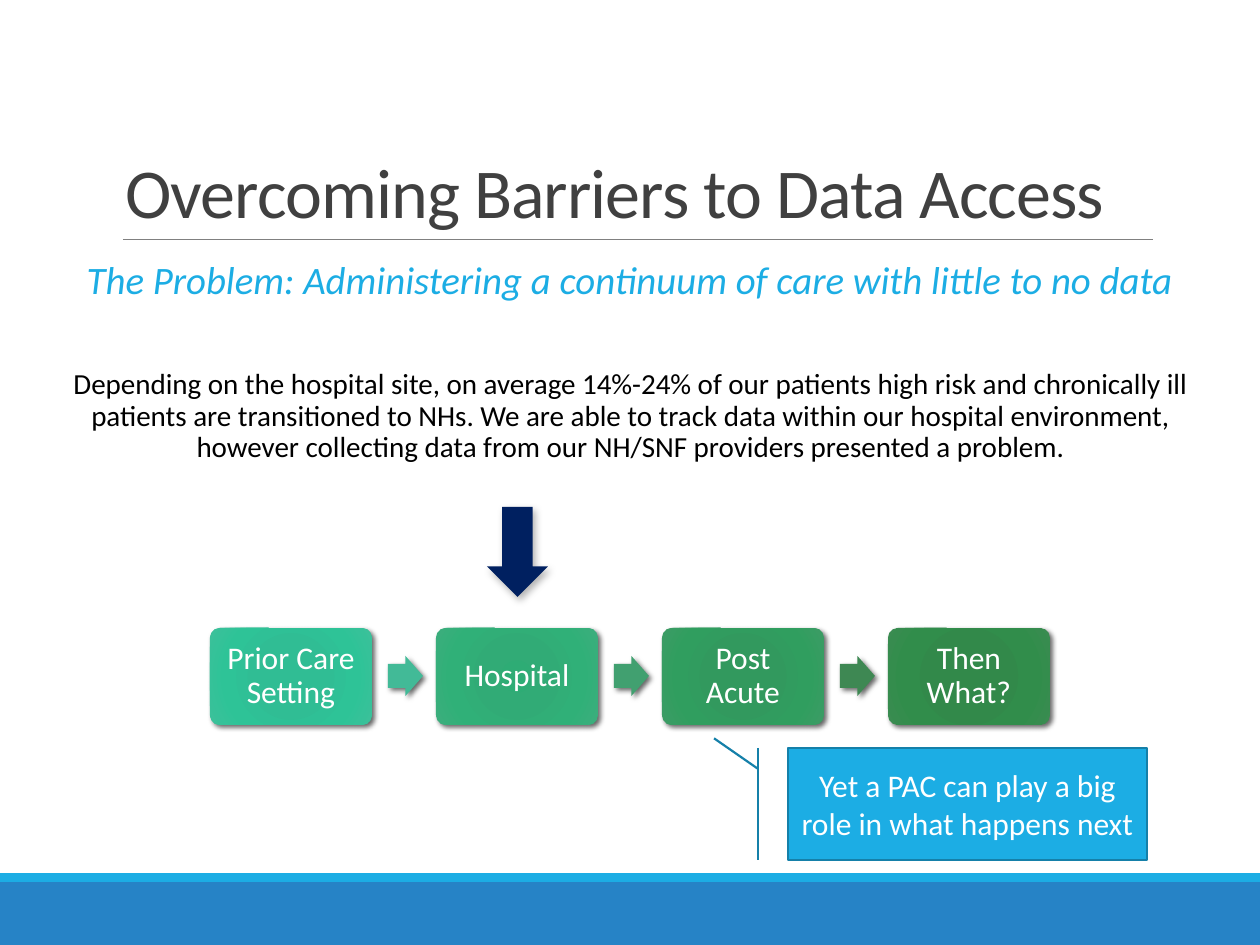
"""Build the slide on barriers to data access along the continuum of care."""
from dataclasses import dataclass
from typing import Any, NamedTuple, Optional

from lxml import etree
from pptx import Presentation
from pptx import util as u
from pptx.dml.color import RGBColor
from pptx.enum import shapes, text
from pptx.oxml import ns

SCALE = 914400 / 126
SHAPE = shapes.MSO_SHAPE
CENTER = text.PP_ALIGN.CENTER
MIDDLE = text.MSO_ANCHOR.MIDDLE


@dataclass(frozen=True)
class Theme:
    font: str = "Calibri"
    title: str = "404040"
    accent: str = "1CADE4"
    accent_dark: str = "1580A9"
    footer: str = "2683C6"
    rule: str = "808080"
    body: str = "000000"
    light: str = "FFFFFF"
    navy: str = "002060"
    title_size: float = 40
    lead_size: float = 22.2
    body_size: float = 16.6
    label_size: float = 18


class Box(NamedTuple):
    left: int
    top: int
    width: int
    height: int


class Shadow(NamedTuple):
    alpha: int
    blur: float
    distance: float
    angle: int


@dataclass(frozen=True)
class Step:
    label: str
    gradient: tuple[str, str, str, str]
    arrow: Optional[str] = None


@dataclass(frozen=True)
class Line:
    wording: str
    size: float
    color: str
    font: dict[str, Any]
    paragraph: dict[str, Any]


THEME = Theme()
STEP_SHADOW = Shadow(60, 3, 2, 45)
DOWN_SHADOW = Shadow(30, 4.5, 2.6, 53)
STOPS = (0, 34, 70, 100)
FIRST_STEP = Box(210, 628, 162, 97)
FIRST_ARROW = Box(388, 656, 35, 40)
PITCH = 226
STEPS = (
    Step("Prior Care Setting", ("2DBE94", "30BD94", "2EC397", "3CC09A"), "42BA97"),
    Step("Hospital", ("2EAC75", "31AB76", "30B078", "3CAE7D"), "41A070"),
    Step("Post Acute", ("2F9A5D", "32995E", "309E5F", "3C9C65"), "3E8853"),
    Step("Then What?", ("2F8949", "32894A", "318D4B", "3A8C51")),
)
BODY_FORMAT = {"alignment": CENTER, "line_spacing": 0.9, "space_after": u.Pt(2)}
TITLE_LINE = Line("Overcoming Barriers to Data Access", THEME.title_size, THEME.title,
                  {}, {"line_spacing": 0.85})
BODY_LINES = (
    Line("The Problem: Administering a continuum of care with little to no data",
         THEME.lead_size, THEME.accent, {"italic": True},
         {**BODY_FORMAT, "space_before": u.Pt(12)}),
    Line("Depending on the hospital site, on average 14%-24% of our patients high risk and "
         "chronically ill patients are transitioned to NHs. We are able to track data within "
         "our hospital environment, however collecting data from our NH/SNF providers "
         "presented a problem.",
         THEME.body_size, THEME.body, {}, {**BODY_FORMAT, "space_before": u.Pt(36)}),
)


def px(length: int) -> u.Emu:
    return u.Emu(round(length * SCALE))


def place(box: Box) -> list[u.Emu]:
    return [px(length) for length in box]


def apply(target: Any, values: dict[str, Any]) -> None:
    for name, value in values.items():
        setattr(target, name, value)


def add_xml(parent: Any, tag: str, **attributes: Any) -> Any:
    values = {name: str(value) for name, value in attributes.items()}
    return etree.SubElement(parent, ns.qn(tag), values)


def write(frame: Any, lines: tuple[Line, ...], frame_format: dict[str, Any]) -> None:
    apply(frame, {"word_wrap": True, **frame_format})
    for index, line in enumerate(lines):
        paragraph = frame.add_paragraph() if index else frame.paragraphs[0]
        apply(paragraph, line.paragraph)
        run = paragraph.add_run()
        run.text = line.wording
        apply(run.font, {"name": THEME.font, "size": u.Pt(line.size), **line.font})
        run.font.color.rgb = RGBColor.from_string(line.color)


def label(wording: str, line_spacing: float) -> Line:
    return Line(wording, THEME.label_size, THEME.light, {},
                {"alignment": CENTER, "line_spacing": line_spacing})


def add_shape(slide: Any, kind: Any, box: Box, fill: Optional[str] = None,
              adjustments: tuple[float, ...] = ()) -> Any:
    shape = slide.shapes.add_shape(kind, *place(box))
    shape.shadow.inherit = False
    shape.line.fill.background()
    if fill:
        shape.fill.solid()
        shape.fill.fore_color.rgb = RGBColor.from_string(fill)
    for index, value in enumerate(adjustments):
        shape.adjustments[index] = value
    return shape


def add_shadow(shape: Any, shadow: Shadow) -> None:
    effects = shape.element.spPr.find(ns.qn("a:effectLst"))
    outer = add_xml(effects, "a:outerShdw", blurRad=u.Pt(shadow.blur),
                    dist=u.Pt(shadow.distance), dir=shadow.angle * 60000,
                    algn="ctr", rotWithShape=0)
    color = add_xml(outer, "a:srgbClr", val="000000")
    add_xml(color, "a:alpha", val=shadow.alpha * 1000)


def add_radial_fill(shape: Any, colors: tuple[str, ...]) -> None:
    gradient = etree.Element(ns.qn("a:gradFill"), {"rotWithShape": "1"})
    stops = add_xml(gradient, "a:gsLst")
    for position, color in zip(STOPS, colors):
        stop = add_xml(stops, "a:gs", pos=position * 1000)
        add_xml(stop, "a:srgbClr", val=color)
    circle = add_xml(gradient, "a:path", path="circle")
    add_xml(circle, "a:fillToRect", **dict.fromkeys("ltrb", 100000))
    shape.element.spPr.find(ns.qn("a:prstGeom")).addnext(gradient)


def add_step(slide: Any, step: Step, offset: int) -> None:
    box = FIRST_STEP._replace(left=FIRST_STEP.left + offset)
    card = add_shape(slide, SHAPE.ROUNDED_RECTANGLE, box, adjustments=(0.1,))
    add_radial_fill(card, step.gradient)
    add_shadow(card, STEP_SHADOW)
    margins = dict.fromkeys(("margin_left", "margin_right", "margin_top", "margin_bottom"), px(12))
    write(card.text_frame, (label(step.label, 0.9),), {**margins, "vertical_anchor": MIDDLE})
    if step.arrow:
        box = FIRST_ARROW._replace(left=FIRST_ARROW.left + offset)
        arrow = add_shape(slide, SHAPE.RIGHT_ARROW, box, step.arrow, (0.6, 0.5))
        add_shadow(arrow, STEP_SHADOW)


def add_rule(slide: Any, left: int, right: int, top: int) -> None:
    rule = slide.shapes.add_connector(shapes.MSO_CONNECTOR.STRAIGHT,
                                      px(left), px(top), px(right), px(top))
    rule.line.color.rgb = RGBColor.from_string(THEME.rule)
    rule.line.width = u.Pt(0.5)
    add_xml(rule.element.spPr, "a:effectLst")


def add_callout(slide: Any) -> None:
    callout = add_shape(slide, SHAPE.LINE_CALLOUT_1_BORDER_AND_ACCENT_BAR,
                        Box(788, 748, 359, 112), THEME.accent,
                        (0.188, -0.083, -0.086, -0.206))
    callout.line.color.rgb = RGBColor.from_string(THEME.accent_dark)
    callout.line.width = u.Pt(1.25)
    line = label("Yet a PAC can play a big role in what happens next", 1.0)
    write(callout.text_frame, (line,), {"vertical_anchor": MIDDLE})


def main() -> None:
    presentation = Presentation()
    apply(presentation, {"slide_width": px(1260), "slide_height": px(945)})
    slide = presentation.slides.add_slide(presentation.slide_layouts[6])
    add_shape(slide, SHAPE.RECTANGLE, Box(0, 882, 1260, 63), THEME.footer)
    add_shape(slide, SHAPE.RECTANGLE, Box(0, 873, 1260, 9), THEME.accent)
    add_rule(slide, 123, 1153, 239)
    body = slide.shapes.add_textbox(*place(Box(68, 255, 1124, 234)))
    write(body.text_frame, BODY_LINES, {"margin_left": 0, "margin_right": 0})
    title = slide.shapes.add_textbox(*place(Box(113, 39, 1040, 200)))
    write(title.text_frame, (TITLE_LINE,), {"vertical_anchor": text.MSO_ANCHOR.BOTTOM})
    title.text_frame.paragraphs[0].runs[0].font._element.set("spc", "-50")
    for index, step in enumerate(STEPS):
        add_step(slide, step, index * PITCH)
    down_arrow = add_shape(slide, SHAPE.DOWN_ARROW, Box(487, 507, 61, 90), THEME.navy)
    add_shadow(down_arrow, DOWN_SHADOW)
    add_callout(slide)
    presentation.save("out.pptx")


if __name__ == "__main__":
    main()
